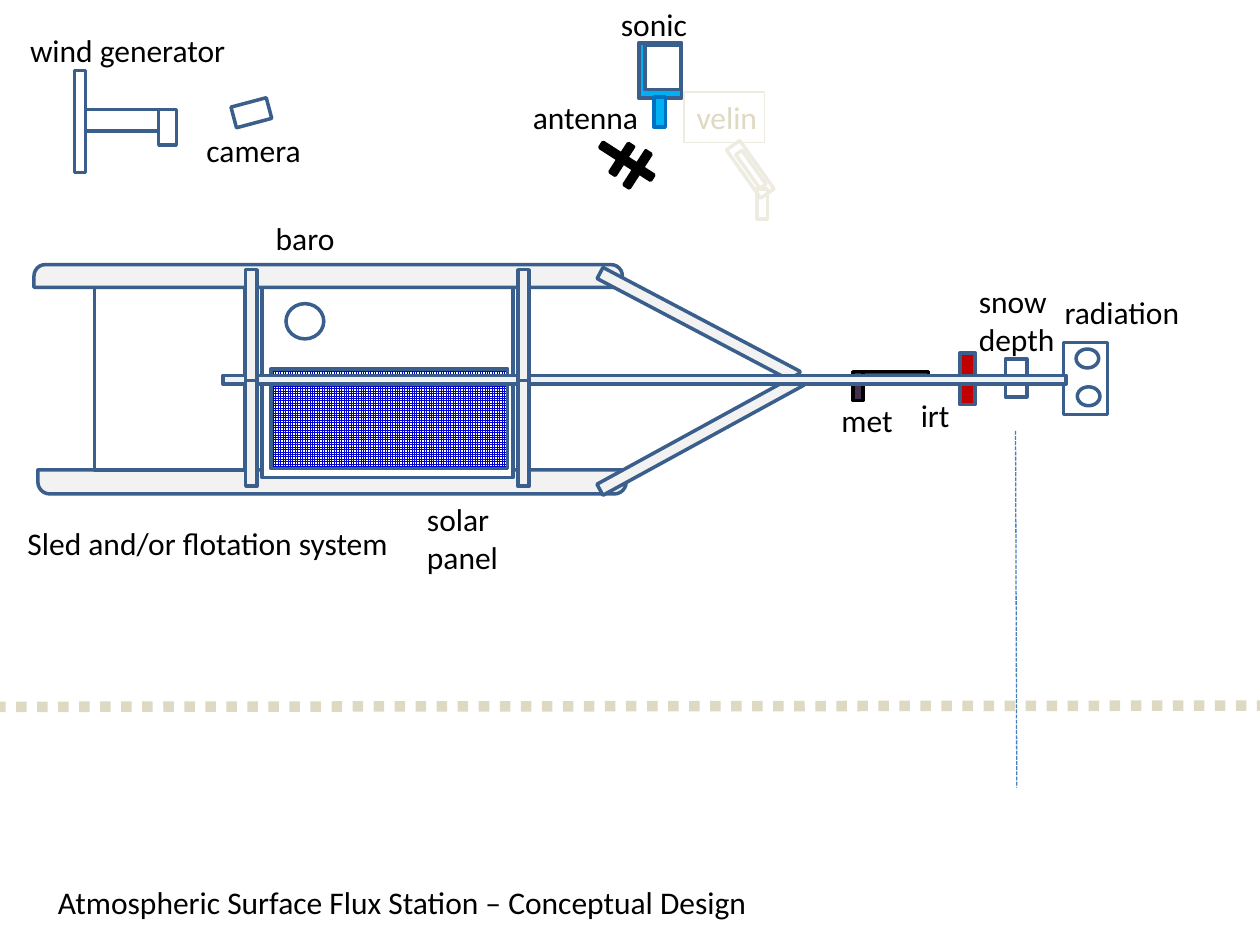
from lxml import etree
from pptx import Presentation
from pptx import util as u
from pptx.dml.color import RGBColor
from pptx.enum import dml, shapes, text
from pptx.oxml.ns import qn

COLORS = {
    "outline": "3A5F8C", "metal": "F2F2F2", "white": "FFFFFF", "black": "000000",
    "pale": "EEECE1", "sand": "DDD9C3", "red": "C00000", "purple": "403152",
    "cyan": "00B0F0", "blue": "0070C0", "beam": "4B7EBC", "solar": "0000CC",
}
RECT = shapes.MSO_SHAPE.RECTANGLE
OVAL = shapes.MSO_SHAPE.OVAL


def rgb(name):
    """Return the named colour."""
    return RGBColor.from_string(COLORS[name])


def part(slide, origin, place, fill=None, line="outline", kind=RECT, turn=0, weight=2):
    """Draw one piece of equipment at a place relative to the origin."""
    left, top, width, height = place
    piece = slide.shapes.add_shape(
        kind, u.Inches(origin[0] + left), u.Inches(origin[1] + top),
        u.Inches(width), u.Inches(height))
    piece.shadow.inherit = False
    piece.rotation = turn
    if fill:
        piece.fill.solid()
        piece.fill.fore_color.rgb = rgb(fill)
    else:
        piece.fill.background()
    piece.line.color.rgb = rgb(line)
    piece.line.width = u.Pt(weight)
    return piece


def write(frame, words, color="black", wrap=False):
    """Set left-aligned words in the label style."""
    frame.text = words
    frame.word_wrap = wrap
    frame.vertical_anchor = text.MSO_ANCHOR.TOP
    paragraph = frame.paragraphs[0]
    paragraph.alignment = text.PP_ALIGN.LEFT
    font = paragraph.runs[0].font
    font.name = "Calibri"
    font.size = u.Pt(18)
    font.color.rgb = rgb(color)


def label(slide, origin, words, left, top, width, height=0.4, wrap=False):
    """Name a piece of equipment."""
    box = slide.shapes.add_textbox(
        u.Inches(origin[0] + left), u.Inches(origin[1] + top),
        u.Inches(width), u.Inches(height))
    write(box.text_frame, words, wrap=wrap)


def dashed(slide, origin, start, end, color, weight, dash):
    """Draw a dashed line between two points relative to the origin."""
    x, y = origin
    line = slide.shapes.add_connector(
        shapes.MSO_CONNECTOR.STRAIGHT, u.Inches(x + start[0]), u.Inches(y + start[1]),
        u.Inches(x + end[0]), u.Inches(y + end[1]))
    line.line.color.rgb = rgb(color)
    line.line.width = u.Pt(weight)
    line.line.dash_style = dash
    etree.SubElement(line._element.spPr, qn("a:effectLst"))


def wind_generator(slide, origin):
    """Draw the rotor, shaft and housing."""
    for place in ((0.45, 0.36, 0.09, 0.81), (0.54, 0.67, 0.58, 0.17),
                  (1.12, 0.67, 0.14, 0.28)):
        part(slide, origin, place)
    label(slide, origin, "wind generator", 0, 0, 1.77)


def camera(slide, origin):
    """Draw the tilted camera."""
    part(slide, origin, (0.31, 0, 0.29, 0.17), turn=345.1)
    label(slide, origin, "camera", 0, 0.18, 0.96)


def sonic(slide, origin):
    """Draw the sonic head on its stem."""
    part(slide, origin, (0.24, 0.35, 0.34, 0.44), "cyan")
    part(slide, origin, (0.29, 0.37, 0.28, 0.35), "white")
    part(slide, origin, (0.36, 0.78, 0.09, 0.24), "cyan", "blue")
    label(slide, origin, "sonic", 0, 0, 0.73)


def antenna(slide, origin):
    """Draw the antenna boom and its two elements."""
    for place in ((0.82, 0.31, 0.05, 0.48), (0.67, 0.51, 0.27, 0.05),
                  (0.77, 0.59, 0.32, 0.05)):
        part(slide, origin, place, "black", "black", turn=302.8)
    label(slide, origin, "antenna", 0, 0, 1.05)


def gas_analyzer(slide, origin):
    """Draw the faded gas analyzer and its framed name."""
    for place, turn in (((0.46, 0.38, 0.13, 0.47), 324.6),
                        ((0.58, 0.77, 0.08, 0.24), 0),
                        ((0.5, 0.45, 0.06, 0.33), 324.6)):
        part(slide, origin, place, line="pale", turn=turn)
    name = part(slide, origin, (0, 0, 0.64, 0.4), line="pale", weight=0.75)
    write(name.text_frame, "velin", "sand")


def sled(slide, origin):
    """Draw the runners, deck, solar panel, barometer and towing arms."""
    runner = shapes.MSO_SHAPE.ROUND_2_SAME_RECTANGLE
    lower = part(slide, origin, (0.03, 1.63, 4.67, 0.19), "metal", kind=runner, turn=180)
    part(slide, origin, (1.81, 0.08, 1.99, 1.61), "white")
    panel = part(slide, origin, (1.88, 0.83, 1.88, 0.79))
    panel.fill.patterned()
    panel.fill.pattern = dml.MSO_PATTERN.SMALL_GRID
    panel.fill.fore_color.rgb = rgb("solar")
    panel.fill.back_color.rgb = rgb("white")
    upper = part(slide, origin, (0, 0, 4.67, 0.18), "metal", kind=runner)
    for rail in (lower, upper):
        rail.adjustments[0] = 0.5
    part(slide, origin, (4.39, 0.43, 1.77, 0.1), "metal", turn=27.8)
    part(slide, origin, (4.38, 1.3, 1.82, 0.1), "metal", turn=331.3)
    part(slide, origin, (2, 0.31, 0.3, 0.28), kind=OVAL)
    part(slide, origin, (0.48, 0.18, 1.19, 1.45))
    label(slide, origin, "baro", 1.82, -0.41, 0.67)
    label(slide, origin, "solar panel", 3.02, 1.82, 0.89, 0.71, wrap=True)
    label(slide, origin, "Sled and/or flotation system", -0.15, 2.01, 3.16, wrap=True)


def boom(slide, origin):
    """Draw the long boom over the sensors it carries."""
    part(slide, origin, (6.67, 0.53, 0.35, 0.57), "white")
    for left, top in ((6.78, 0.88), (6.77, 0.58)):
        part(slide, origin, (left, top, 0.18, 0.15), kind=OVAL)
    part(slide, origin, (6.21, 0.66, 0.17, 0.3))
    part(slide, origin, (5.85, 0.61, 0.12, 0.41), "red")
    part(slide, origin, (5.08, 0.76, 0.52, 0.09), "purple", "black")
    part(slide, origin, (5, 0.76, 0.08, 0.23), "purple", "black")
    dashed(slide, origin, (6.29, 1.23), (6.3, 4.06), "beam", 0.75,
           dml.MSO_LINE.SQUARE_DOT)
    part(slide, origin, (0, 0.79, 6.69, 0.07), "metal")
    label(slide, origin, "radiation", 6.58, 0.09, 1.12)
    label(slide, origin, "snow depth", 5.9, 0, 0.87, 0.71, wrap=True)
    label(slide, origin, "met", 4.81, 0.94, 0.61)
    label(slide, origin, "irt", 5.44, 0.9, 0.43)


def crossbars(slide, origin):
    """Draw the paired bars that clamp the boom to the sled."""
    for left in (1.68, 3.84):
        for top, height in ((0.9, 0.86), (0.04, 0.88)):
            part(slide, origin, (left, top, 0.09, height), "metal")


def heading(slide, left, top, width, height):
    """Place the title below the drawing."""
    title = slide.shapes.title
    title.left, title.top = u.Inches(left), u.Inches(top)
    title.width, title.height = u.Inches(width), u.Inches(height)
    write(title.text_frame, "Atmospheric Surface Flux Station – Conceptual Design",
          wrap=True)


def main():
    """Build the station slide."""
    deck = Presentation()
    deck.slide_width, deck.slide_height = u.Inches(10), u.Inches(7.5)
    slide = deck.slides.add_slide(deck.slide_layouts[5])
    slide.background.fill.solid()
    slide.background.fill.fore_color.rgb = rgb("white")
    heading(slide, 0.36, 6.96, 6.24, 0.4)
    wind_generator(slide, (0.14, 0.2))
    camera(slide, (1.54, 0.81))
    gas_analyzer(slide, (5.43, 0.73))
    antenna(slide, (4.13, 0.73))
    sonic(slide, (4.83, -0.01))
    dashed(slide, (0, 5.6), (-0.04, 0.01), (10, 0), "sand", 6, dml.MSO_LINE.ROUND_DOT)
    sled(slide, (0.27, 2.1))
    boom(slide, (1.77, 2.19))
    crossbars(slide, (0.27, 2.1))
    deck.save("out.pptx")


if __name__ == "__main__":
    main()
